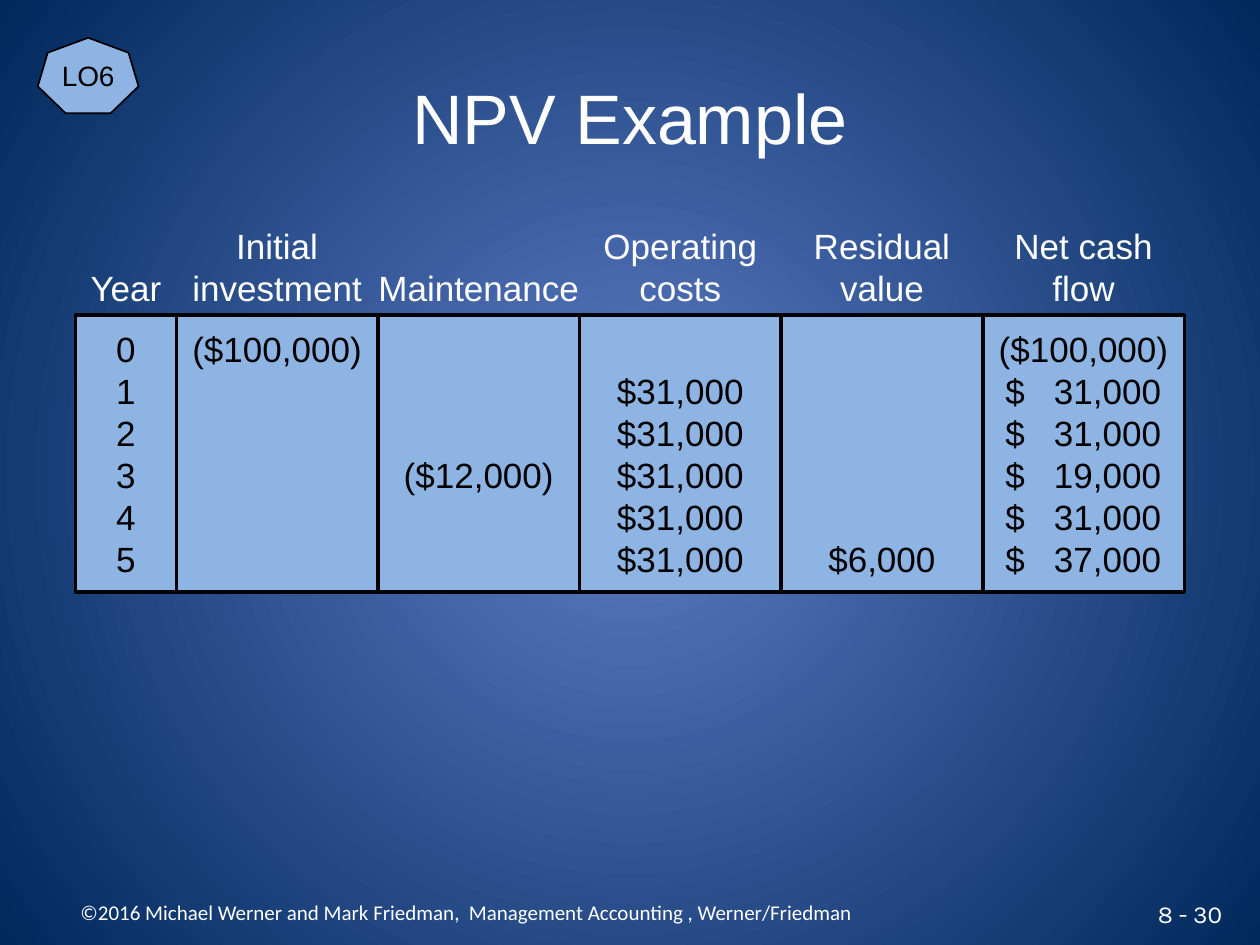
from dataclasses import dataclass
from typing import Optional

from lxml import etree
from pptx import Presentation
from pptx import util as u
from pptx.dml.color import RGBColor
from pptx.enum import shapes, text
from pptx.oxml.ns import qn

COLORS = {
    "glow": "5E7CC5",
    "navy": "00295C",
    "panel": "8EB4E3",
    "black": "000000",
    "white": "FFFFFF",
}
TABLE_LEFT, TABLE_TOP, TABLE_HEIGHT = 43.2, 180, 158.4
HEADER_HEIGHT = 57.6
ROW_HEIGHT, ROW_COUNT = 24, 6
FIRST_ROW_INSET = (TABLE_HEIGHT - ROW_COUNT * ROW_HEIGHT) / 2
AMOUNT_TABS = ((4.3, "l"), (93.4, "r"))


@dataclass
class Box:
    left: float
    top: float
    width: float
    height: float

    def lengths(self) -> tuple:
        return tuple(u.Pt(v) for v in (self.left, self.top, self.width, self.height))


@dataclass
class Style:
    size: float
    color: str = "white"
    font: str = "Arial"
    align: text.PP_ALIGN = text.PP_ALIGN.CENTER
    line_height: Optional[float] = None


@dataclass
class Column:
    heading: list
    width: float
    values: list
    first_row: int = 0


HEADING = Style(20, line_height=ROW_HEIGHT)
VALUE = Style(20, "black", line_height=ROW_HEIGHT)
COLUMNS = [
    Column(["Year"], 57.6, [str(year) for year in range(ROW_COUNT)]),
    Column(["Initial", "investment"], 115.2, ["($100,000)"]),
    Column(["Maintenance"], 115.2, ["($12,000)"], 3),
    Column(["Operating", "costs"], 115.2, ["$31,000"] * 5, 1),
    Column(["Residual", "value"], 115.2, ["$6,000"], 5),
    Column(["Net cash", "flow"], 115.2,
           ["($100,000)"] + [f"\t$\t{amount},000" for amount in (31, 31, 19, 31, 37)]),
]


def rgb(name: str) -> RGBColor:
    return RGBColor.from_string(COLORS[name])


def set_tabs(paragraph) -> None:
    paragraph.alignment = text.PP_ALIGN.LEFT
    tabs = etree.SubElement(paragraph._p.get_or_add_pPr(), qn("a:tabLst"))
    for position, align in AMOUNT_TABS:
        etree.SubElement(tabs, qn("a:tab"), pos=str(u.Pt(position)), algn=align)


def write(shape, lines: list, style: Style, **frame_format) -> None:
    frame = shape.text_frame
    for name, value in frame_format.items():
        setattr(frame, name, value)
    for index, line in enumerate(lines):
        paragraph = frame.add_paragraph() if index else frame.paragraphs[0]
        paragraph.alignment = style.align
        if style.line_height:
            paragraph.line_spacing = u.Pt(style.line_height)
        if "\t" in line:
            set_tabs(paragraph)
        run = paragraph.add_run()
        run.text = line
        for name, value in {"size": u.Pt(style.size), "name": style.font}.items():
            setattr(run.font, name, value)
        run.font.color.rgb = rgb(style.color)


def add_panel(slide, kind: shapes.MSO_SHAPE, box: Box, line_width: float):
    shape = slide.shapes.add_shape(kind, *box.lengths())
    shape.shadow.inherit = False
    shape.fill.solid()
    shape.fill.fore_color.rgb = rgb("panel")
    shape.line.color.rgb = rgb("black")
    shape.line.width = u.Pt(line_width)
    return shape


def add_label(slide, box: Box, lines: list, style: Style, **frame_format) -> None:
    write(slide.shapes.add_textbox(*box.lengths()), lines, style, **frame_format)


def add_column(slide, column: Column, left: float) -> None:
    body = Box(left, TABLE_TOP, column.width, TABLE_HEIGHT)
    panel = add_panel(slide, shapes.MSO_SHAPE.RECTANGLE, body, 2)
    write(panel, column.values, VALUE, word_wrap=True,
          vertical_anchor=text.MSO_ANCHOR.TOP,
          margin_left=u.Pt(8.6), margin_right=u.Pt(8.6), margin_bottom=0,
          margin_top=u.Pt(FIRST_ROW_INSET + column.first_row * ROW_HEIGHT))
    header = Box(left, TABLE_TOP - HEADER_HEIGHT, column.width, HEADER_HEIGHT)
    add_label(slide, header, column.heading, HEADING, word_wrap=False,
              margin_left=0, margin_right=0,
              vertical_anchor=text.MSO_ANCHOR.BOTTOM)


def paint_background(slide) -> None:
    fill = slide.background.fill
    fill.gradient()
    for stop, name in zip(fill.gradient_stops, ("glow", "navy")):
        stop.color.rgb = rgb(name)
    linear = next(slide.element.iter(qn("a:lin")))
    radial = etree.Element(qn("a:path"), path="circle")
    etree.SubElement(radial, qn("a:fillToRect"),
                     {side: "50000" for side in "ltrb"})
    linear.getparent().replace(linear, radial)


def main() -> None:
    presentation = Presentation()
    presentation.slide_width, presentation.slide_height = u.Pt(720), u.Pt(540)
    slide = presentation.slides.add_slide(presentation.slide_layouts[5])
    paint_background(slide)

    title = slide.shapes.title
    title.left, title.top, title.width, title.height = Box(36, 21.6, 648, 90).lengths()
    write(title, ["NPV Example"], Style(40), vertical_anchor=text.MSO_ANCHOR.MIDDLE)

    left = TABLE_LEFT
    for column in COLUMNS:
        add_column(slide, column, left)
        left += column.width

    badge = add_panel(slide, shapes.MSO_SHAPE.HEPTAGON, Box(21.6, 21.6, 57.6, 43.2), 1)
    write(badge, ["LO6"], Style(16, "black"), word_wrap=False,
          vertical_anchor=text.MSO_ANCHOR.BOTTOM)

    add_label(slide, Box(36, 502.56, 540, 37.44),
              ["©2016 Michael Werner and Mark Friedman,  Management Accounting , Werner/Friedman"],
              Style(12, font="Calibri", align=text.PP_ALIGN.LEFT), word_wrap=True,
              margin_left=u.Pt(10), vertical_anchor=text.MSO_ANCHOR.MIDDLE)
    add_label(slide, Box(648, 511.2, 57.6, 21.6), ["8 - 30"],
              Style(14, font="Karla", align=text.PP_ALIGN.RIGHT), word_wrap=False,
              vertical_anchor=text.MSO_ANCHOR.MIDDLE)

    presentation.save("out.pptx")


if __name__ == "__main__":
    main()
